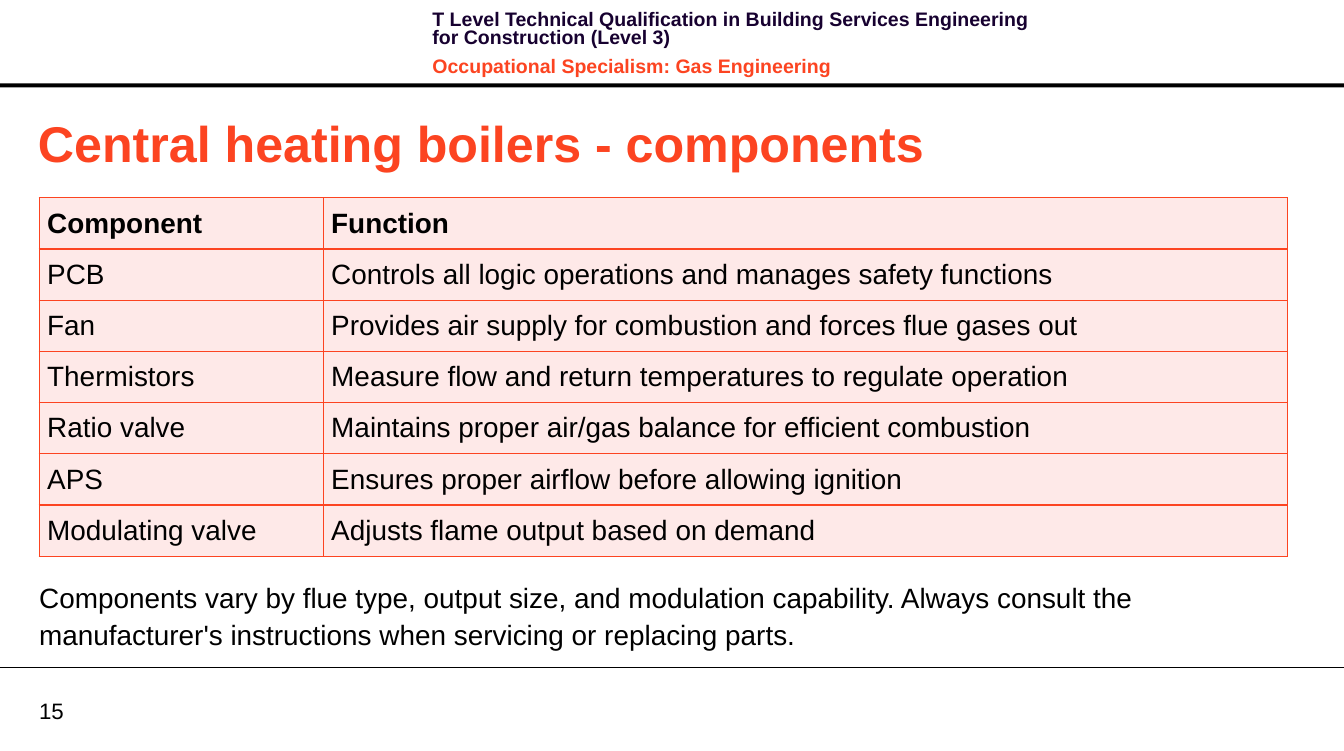
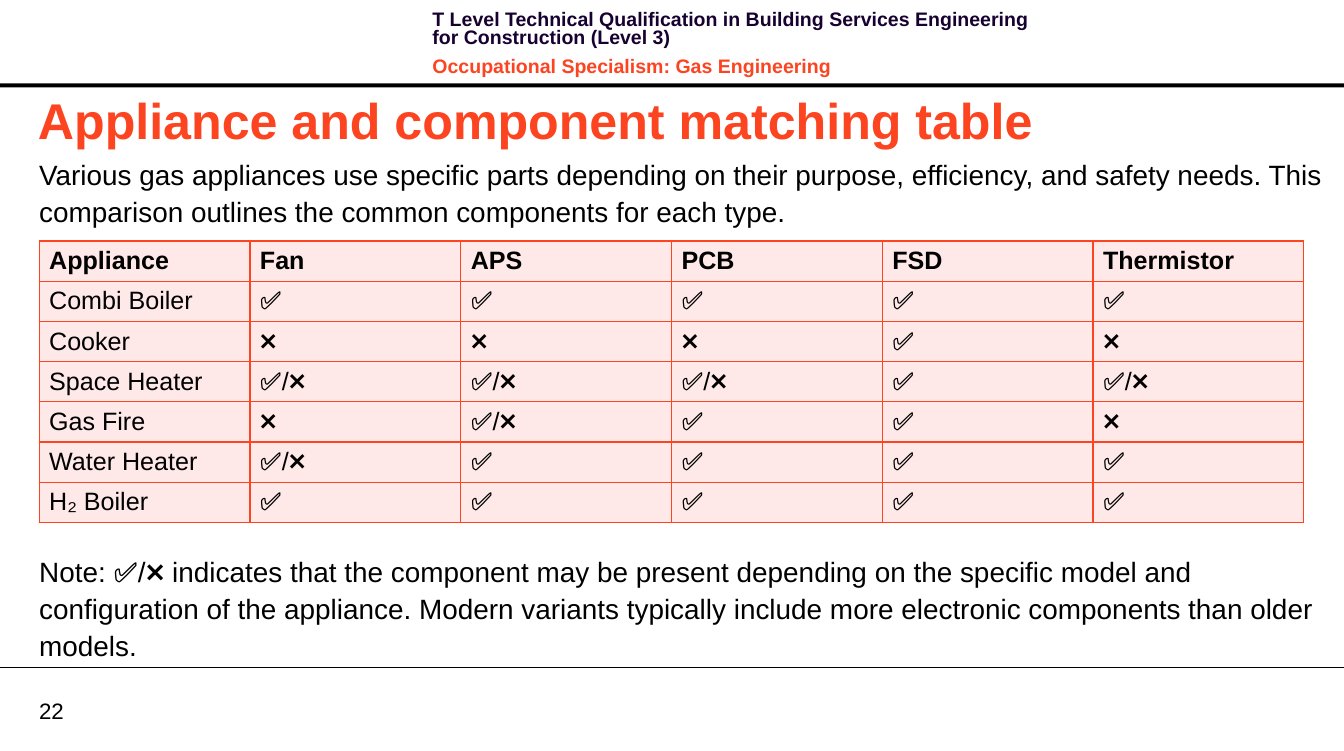
"""Build two gas engineering slides with component tables."""
from lxml.etree import SubElement
from pptx import Presentation
from pptx.dml.color import RGBColor
from pptx.enum.shapes import MSO_CONNECTOR, MSO_SHAPE
from pptx.enum.text import MSO_ANCHOR
from pptx.oxml.ns import qn
from pptx.util import Inches, Pt

WIDTH, HEIGHT, LEFT = 13.39, 7.48, 0.39
FONT = "Arial"
BLACK, NAVY, ORANGE, PINK = "000000", "170130", "FC4421", "FEE9E8"
YES, NO, MAYBE = "✅", "❌", "✅/❌"

HEADER = [
    ("T Level Technical Qualification in Building Services Engineering for Construction (Level 3)", NAVY),
    ("Occupational Specialism: Gas Engineering", ORANGE),
]
SLIDES = [
    {
        "number": "15",
        "title": "Central heating boilers - components",
        "title_at": (0.28, 1.06),
        "texts": [
            ("Components vary by flue type, output size, and modulation capability. "
             "Always consult the manufacturer's instructions when servicing or replacing parts.",
             (LEFT, 5.75, 11.26, 0.71)),
        ],
        "table_top": 1.97,
        "row_height": 0.51,
        "columns": [2.83, 9.61],
        "size": 20,
        "margins": (0.08, 0.04),
        "rows": [
            ("Component", "Function"),
            ("PCB", "Controls all logic operations and manages safety functions"),
            ("Fan", "Provides air supply for combustion and forces flue gases out"),
            ("Thermistors", "Measure flow and return temperatures to regulate operation"),
            ("Ratio valve", "Maintains proper air/gas balance for efficient combustion"),
            ("APS", "Ensures proper airflow before allowing ignition"),
            ("Modulating valve", "Adjusts flame output based on demand"),
        ],
    },
    {
        "number": "22",
        "title": "Appliance and component matching table",
        "title_at": (0.28, 0.83),
        "texts": [
            ("Various gas appliances use specific parts depending on their purpose, efficiency, "
             "and safety needs. This comparison outlines the common components for each type.",
             (LEFT, 1.54, 12.83, 0.73)),
            (f"Note: {MAYBE} indicates that the component may be present depending on the specific "
             "model and configuration of the appliance. Modern variants typically include more "
             "electronic components than older models.",
             (LEFT, 5.49, 12.83, 1.1)),
        ],
        "table_top": 2.4,
        "row_height": 0.4,
        "columns": [2.1] * 6,
        "size": 18,
        "margins": (0.1, 0.05),
        "rows": [
            ("Appliance", "Fan", "APS", "PCB", "FSD", "Thermistor"),
            ("Combi Boiler", YES, YES, YES, YES, YES),
            ("Cooker", NO, NO, NO, YES, NO),
            ("Space Heater", MAYBE, MAYBE, MAYBE, YES, MAYBE),
            ("Gas Fire", NO, MAYBE, YES, YES, NO),
            ("Water Heater", MAYBE, YES, YES, YES, YES),
            ("H₂ Boiler", YES, YES, YES, YES, YES),
        ],
    },
]


def color(value):
    return RGBColor.from_string(value)


def style(paragraph, size, fill=BLACK, bold=False):
    font = paragraph.font
    font.name, font.size, font.bold = FONT, Pt(size), bold
    font.color.rgb = color(fill)


def add_text(slide, box, lines, size, bold=False, margins=(0, 0),
             anchor=MSO_ANCHOR.TOP, line_spacing=None, gap=0):
    frame = slide.shapes.add_textbox(*map(Inches, box)).text_frame
    frame.word_wrap = True
    frame.vertical_anchor = anchor
    frame.margin_left = frame.margin_right = Inches(margins[0])
    frame.margin_top = frame.margin_bottom = Inches(margins[1])
    for index, (text, fill) in enumerate(lines):
        paragraph = frame.add_paragraph() if index else frame.paragraphs[0]
        paragraph.text = text
        paragraph.line_spacing = line_spacing
        if index:
            paragraph.space_before = Pt(gap)
        style(paragraph, size, fill, bold)


def add_frame(slide, number):
    band = slide.shapes.add_shape(
        MSO_SHAPE.RECTANGLE, 0, Inches(0.83), Inches(WIDTH), Inches(0.04))
    band.shadow.inherit = False
    band.fill.solid()
    band.fill.fore_color.rgb = color(BLACK)
    band.line.fill.background()
    rule = slide.shapes.add_connector(
        MSO_CONNECTOR.STRAIGHT, 0, Inches(6.65), Inches(WIDTH), Inches(6.65))
    rule.line.color.rgb = color(BLACK)
    rule.line.width = Pt(0.75)
    SubElement(rule._element.spPr, qn("a:effectLst"))
    add_text(slide, (LEFT, 6.94, 0.64, 0.27), [(number, BLACK)], 16, anchor=MSO_ANCHOR.MIDDLE)
    add_text(slide, (4.21, 0.07, 6.37, 0.64), HEADER, 14, bold=True,
             margins=(0.1, 0.05), line_spacing=Pt(13.1), gap=8)


def add_borders(cell):
    properties = cell._tc.get_or_add_tcPr()
    for side in ("lnL", "lnR", "lnT", "lnB"):
        line = SubElement(properties, qn(f"a:{side}"), w=str(Pt(1)))
        fill = SubElement(line, qn("a:solidFill"))
        SubElement(fill, qn("a:srgbClr"), val=ORANGE)


def add_component_table(slide, content):
    rows, columns = content["rows"], content["columns"]
    table = slide.shapes.add_table(
        len(rows), len(columns), Inches(LEFT), Inches(content["table_top"]),
        Inches(sum(columns)), Inches(content["row_height"] * len(rows))).table
    for column, width in zip(table.columns, columns):
        column.width = Inches(width)
    side, top = map(Inches, content["margins"])
    for row_index, row in enumerate(rows):
        for column_index, text in enumerate(row):
            cell = table.cell(row_index, column_index)
            cell.text = text
            cell.vertical_anchor = MSO_ANCHOR.MIDDLE
            cell.margin_left = cell.margin_right = side
            cell.margin_top = cell.margin_bottom = top
            add_borders(cell)
            cell.fill.solid()
            cell.fill.fore_color.rgb = color(PINK)
            style(cell.text_frame.paragraphs[0], content["size"], bold=row_index == 0)


def main():
    presentation = Presentation()
    presentation.slide_width, presentation.slide_height = Inches(WIDTH), Inches(HEIGHT)
    for content in SLIDES:
        slide = presentation.slides.add_slide(presentation.slide_layouts[6])
        add_frame(slide, content["number"])
        add_text(slide, (*content["title_at"], 12.72, 0.71), [(content["title"], ORANGE)], 36,
                 bold=True, margins=(0.1, 0.05), anchor=MSO_ANCHOR.MIDDLE)
        for text, box in content["texts"]:
            add_text(slide, box, [(text, BLACK)], 20, line_spacing=1.1)
        add_component_table(slide, content)
    presentation.save("out.pptx")


if __name__ == "__main__":
    main()
